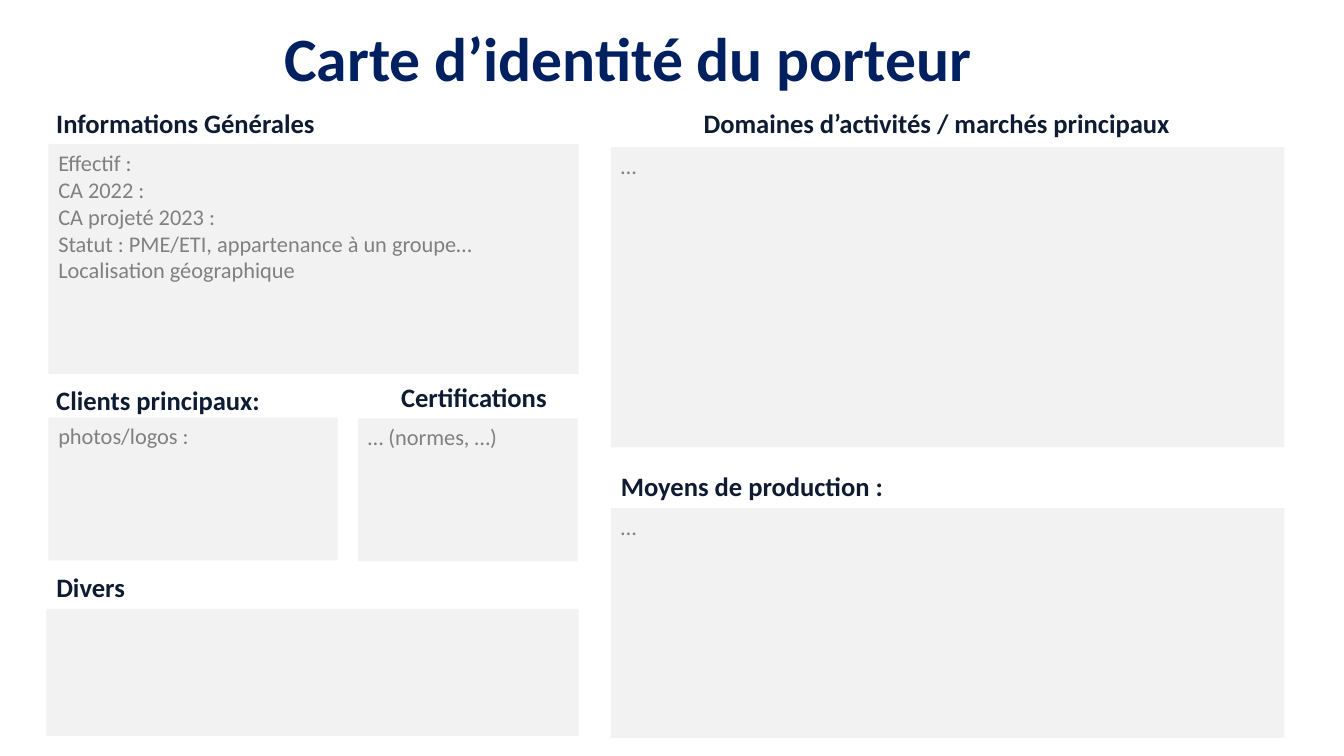
"""Build the project holder's identity card slide."""
from pptx import Presentation
from pptx.dml.color import RGBColor
from pptx.enum.shapes import MSO_SHAPE
from pptx.enum.text import MSO_ANCHOR, PP_ALIGN
from pptx.util import Inches, Pt

RECTANGLE = MSO_SHAPE.RECTANGLE
TOP, MIDDLE = MSO_ANCHOR.TOP, MSO_ANCHOR.MIDDLE
LEFT, JUSTIFY = PP_ALIGN.LEFT, PP_ALIGN.JUSTIFY
COLORS = {"title": "002060", "heading": "0E1B31", "panel": "F2F2F2", "hint": "808080"}
FORMATS = {
    "title": {"name": "Calibri", "size": Pt(44), "bold": True},
    "heading": {"name": "Calibri", "size": Pt(19), "bold": True},
    "hint": {"name": "Calibri", "size": Pt(16), "bold": False},
}


def write_lines(shape, lines, style, alignment=LEFT, anchor=TOP):
    """Fill a shape with one styled paragraph per line."""
    frame = shape.text_frame
    frame.word_wrap = True
    frame.vertical_anchor = anchor
    frame.text = "\n".join(lines)
    for paragraph in frame.paragraphs:
        paragraph.alignment = alignment
        for run in paragraph.runs:
            for attribute, value in FORMATS[style].items():
                setattr(run.font, attribute, value)
            run.font.color.rgb = RGBColor.from_string(COLORS[style])


presentation = Presentation()
presentation.slide_width = Inches(13.33)
presentation.slide_height = Inches(7.5)
slide = presentation.slides.add_slide(presentation.slide_layouts[5])

title = slide.shapes.title
title.left, title.top = Inches(2.72), Inches(0)
title.width, title.height = Inches(9.53), Inches(1.23)
write_lines(title, ["Carte d’identité du porteur"], "title", anchor=MIDDLE)
title.text_frame.paragraphs[0].line_spacing = 0.9

general_lines = [
    "Effectif :",
    "CA 2022 :",
    "CA projeté 2023 :",
    "Statut : PME/ETI, appartenance à un groupe…",
    "Localisation géographique",
]
panels = [
    (0.48, 1.43, 5.26, 2.28, general_lines, JUSTIFY),
    (0.48, 4.14, 2.87, 1.42, ["photos/logos :"], LEFT),
    (3.55, 4.15, 2.18, 1.42, ["… (normes, …)"], LEFT),
    (0.46, 6.04, 5.28, 1.26, [], LEFT),
    (6.06, 1.46, 6.68, 2.98, ["…"], JUSTIFY),
    (6.06, 5.04, 6.68, 2.28, ["…"], JUSTIFY),
]
for left, top, width, height, lines, alignment in panels:
    panel = slide.shapes.add_shape(
        RECTANGLE, Inches(left), Inches(top), Inches(width), Inches(height)
    )
    panel.shadow.inherit = False
    panel.fill.solid()
    panel.fill.fore_color.rgb = RGBColor.from_string(COLORS["panel"])
    panel.line.fill.background()
    write_lines(panel, lines, "hint", alignment)

headings = [
    (0.46, 1.01, 5.86, "Informations Générales"),
    (0.46, 3.76, 2.8, "Clients principaux:"),
    (3.88, 3.73, 2.8, "Certifications"),
    (0.46, 5.61, 2.01, "Divers"),
    (6.88, 1.01, 6.05, "Domaines d’activités / marchés principaux"),
    (6.06, 4.61, 3.21, "Moyens de production :"),
]
for left, top, width, text in headings:
    heading = slide.shapes.add_textbox(
        Inches(left), Inches(top), Inches(width), Inches(0.42)
    )
    write_lines(heading, [text], "heading")

presentation.save("out.pptx")
